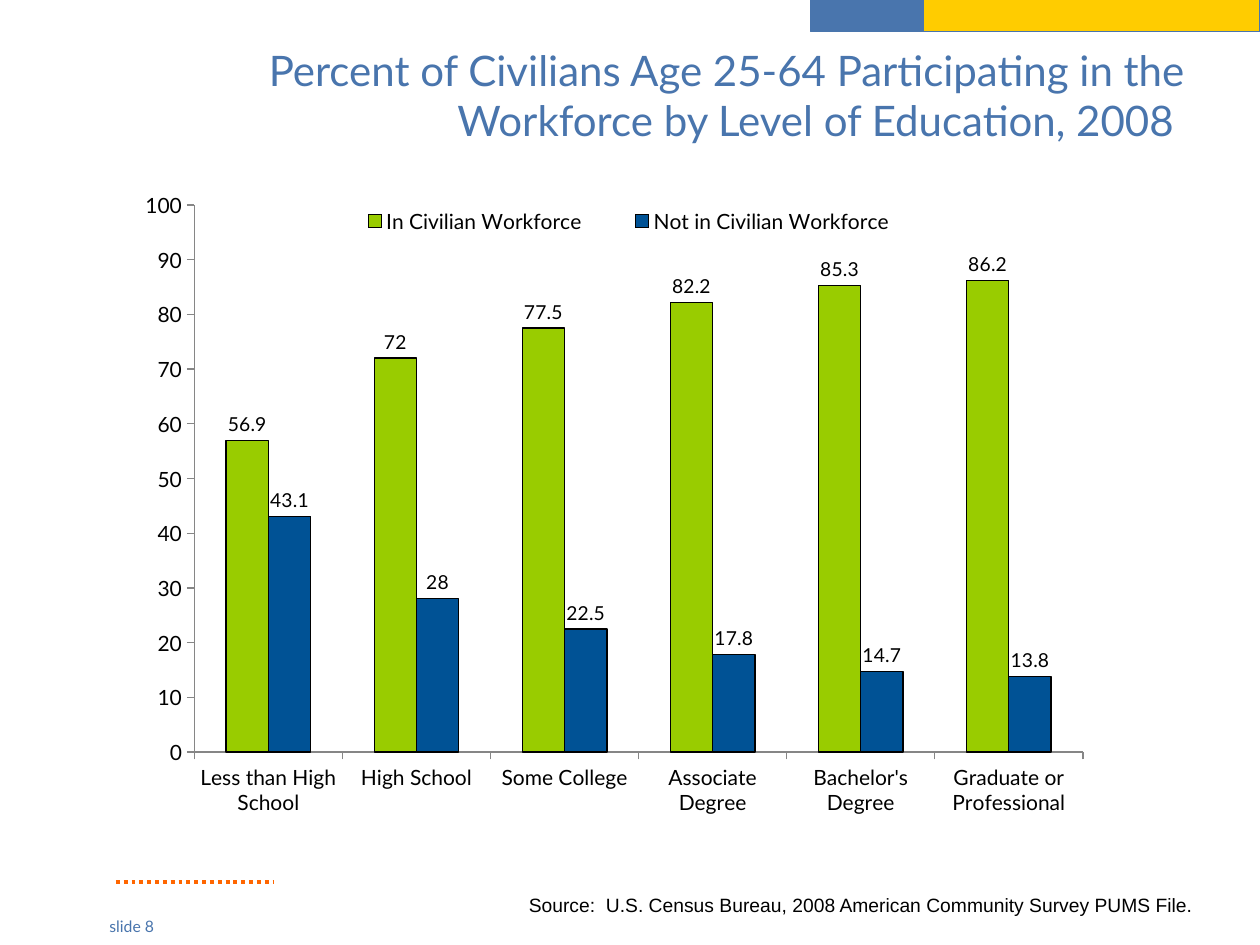
from lxml import etree
from pptx import Presentation
from pptx.chart.data import CategoryChartData
from pptx.dml.color import RGBColor
from pptx.enum import chart as ch, dml, shapes, text
from pptx.oxml import parse_xml
from pptx.oxml.ns import nsdecls, qn
from pptx.util import Inches, Pt

BLUE = RGBColor(0x49, 0x75, 0xAD)
GOLD = RGBColor(0xFF, 0xCC, 0x00)
ORANGE = RGBColor(0xFF, 0x66, 0x00)
GREEN = RGBColor(0x99, 0xCC, 0x00)
NAVY = RGBColor(0x00, 0x52, 0x95)
GRAY = RGBColor(0x86, 0x86, 0x86)
BLACK = RGBColor(0, 0, 0)


def style(font, size, color, name="Lato"):
    font.size, font.name = Pt(size), name
    font.color.rgb = color


def layout(x, y, w, h, inner=False):
    """Manual chart layout, in fractions of the chart area."""
    target = '<c:layoutTarget val="inner"/>' if inner else ""
    return parse_xml(
        f'<c:layout {nsdecls("c")}><c:manualLayout>{target}'
        '<c:xMode val="edge"/><c:yMode val="edge"/>'
        f'<c:x val="{x}"/><c:y val="{y}"/><c:w val="{w}"/><c:h val="{h}"/>'
        '</c:manualLayout></c:layout>')


deck = Presentation()
deck.slide_width, deck.slide_height = Inches(10), Inches(7.5)
slide = deck.slides.add_slide(deck.slide_layouts[5])

# Bars along the top edge
for left, width, color in ((6.43, 0.91, BLUE), (7.33, 2.67, GOLD)):
    bar = slide.shapes.add_shape(shapes.MSO_SHAPE.RECTANGLE, Inches(left),
                                 Inches(-0.01), Inches(width), Inches(0.26))
    bar.shadow.inherit = False
    bar.fill.solid()
    bar.fill.fore_color.rgb = color
    bar.line.color.rgb = BLUE
    bar.line.width = Pt(0.75)

# Dotted rule above the slide number
rule = slide.shapes.add_connector(shapes.MSO_CONNECTOR.STRAIGHT, Inches(0.92),
                                  Inches(7), Inches(2.17), Inches(7))
rule.line.color.rgb = ORANGE
rule.line.width = Pt(2.25)
rule.line.dash_style = dml.MSO_LINE.ROUND_DOT
etree.SubElement(rule._element.spPr, qn("a:effectLst"))

# Title
title = slide.shapes.title
title.left, title.top = Inches(0.5), Inches(0.19)
title.width, title.height = Inches(9), Inches(1.12)
frame = title.text_frame
frame.text = ("Percent of Civilians Age 25-64 Participating in the "
              "Workforce by Level of Education, 2008 ")
frame.vertical_anchor = text.MSO_ANCHOR.MIDDLE
frame.paragraphs[0].alignment = text.PP_ALIGN.RIGHT
style(frame.paragraphs[0].runs[0].font, 24, BLUE)

# Source line and slide number
notes = (
    (3.78, 7.04, 5.79, 0.29, 11, "Arial", BLACK, text.PP_ALIGN.RIGHT,
     "Source:  U.S. Census Bureau, 2008 American Community Survey PUMS File."),
    (0.77, 7.23, 1, 0.27, 9, "Lato", BLUE, text.PP_ALIGN.LEFT, "slide 8"),
)
for left, top, width, height, size, name, color, align, words in notes:
    box = slide.shapes.add_textbox(Inches(left), Inches(top),
                                   Inches(width), Inches(height))
    box.text_frame.word_wrap = True
    box.text_frame.text = words
    para = box.text_frame.paragraphs[0]
    para.alignment = align
    style(para.runs[0].font, size, color, name)

# Chart of workforce participation
data = CategoryChartData()
data.categories = ["Less than High School", "High School", "Some College",
                   "Associate Degree", "Bachelor's Degree",
                   "Graduate or Professional"]
data.add_series("In Civilian Workforce", (56.9, 72, 77.5, 82.2, 85.3, 86.2))
data.add_series("Not in Civilian Workforce", (43.1, 28, 22.5, 17.8, 14.7, 13.8))
chart = slide.shapes.add_chart(
    ch.XL_CHART_TYPE.COLUMN_CLUSTERED, Inches(1), Inches(1.42),
    Inches(7.75), Inches(5.17), data).chart
chart.has_title = False
style(chart.font, 18, BLACK)

plot = chart.plots[0]
plot.gap_width, plot.overlap = 150, 0
plot.vary_by_categories = False
for series, color in zip(plot.series, (GREEN, NAVY)):
    series.format.fill.solid()
    series.format.fill.fore_color.rgb = color
    series.format.line.color.rgb = BLACK
    series.format.line.width = Pt(0.75)
    labels = series.data_labels
    labels.show_value = True
    labels.position = ch.XL_LABEL_POSITION.OUTSIDE_END
    style(labels.font, 11, BLACK)

# Axes
for axis in (chart.category_axis, chart.value_axis):
    axis.has_major_gridlines = False
    axis.major_tick_mark = ch.XL_TICK_MARK.OUTSIDE
    axis.minor_tick_mark = ch.XL_TICK_MARK.NONE
    axis.format.line.color.rgb = GRAY
    style(axis.tick_labels.font, 12, BLACK)
chart.value_axis.minimum_scale = 0
chart.value_axis.maximum_scale = 100
chart.value_axis.major_unit = 10

# Legend laid over the top of the plot
chart.has_legend = True
legend = chart.legend
legend.position = ch.XL_LEGEND_POSITION.RIGHT
legend.include_in_layout = True
style(legend.font, 12, BLACK)
area = chart._chartSpace.find(".//" + qn("c:plotArea"))
key = chart._chartSpace.find(".//" + qn("c:legend"))
for part in (area, key):
    for old in part.findall(qn("c:layout")):
        part.remove(old)
area.insert(0, layout(0.07, 0.04, 0.91, 0.84, inner=True))
key.find(qn("c:legendPos")).addnext(layout(0.2, 0.04, 0.63, 0.05))

deck.save("out.pptx")
